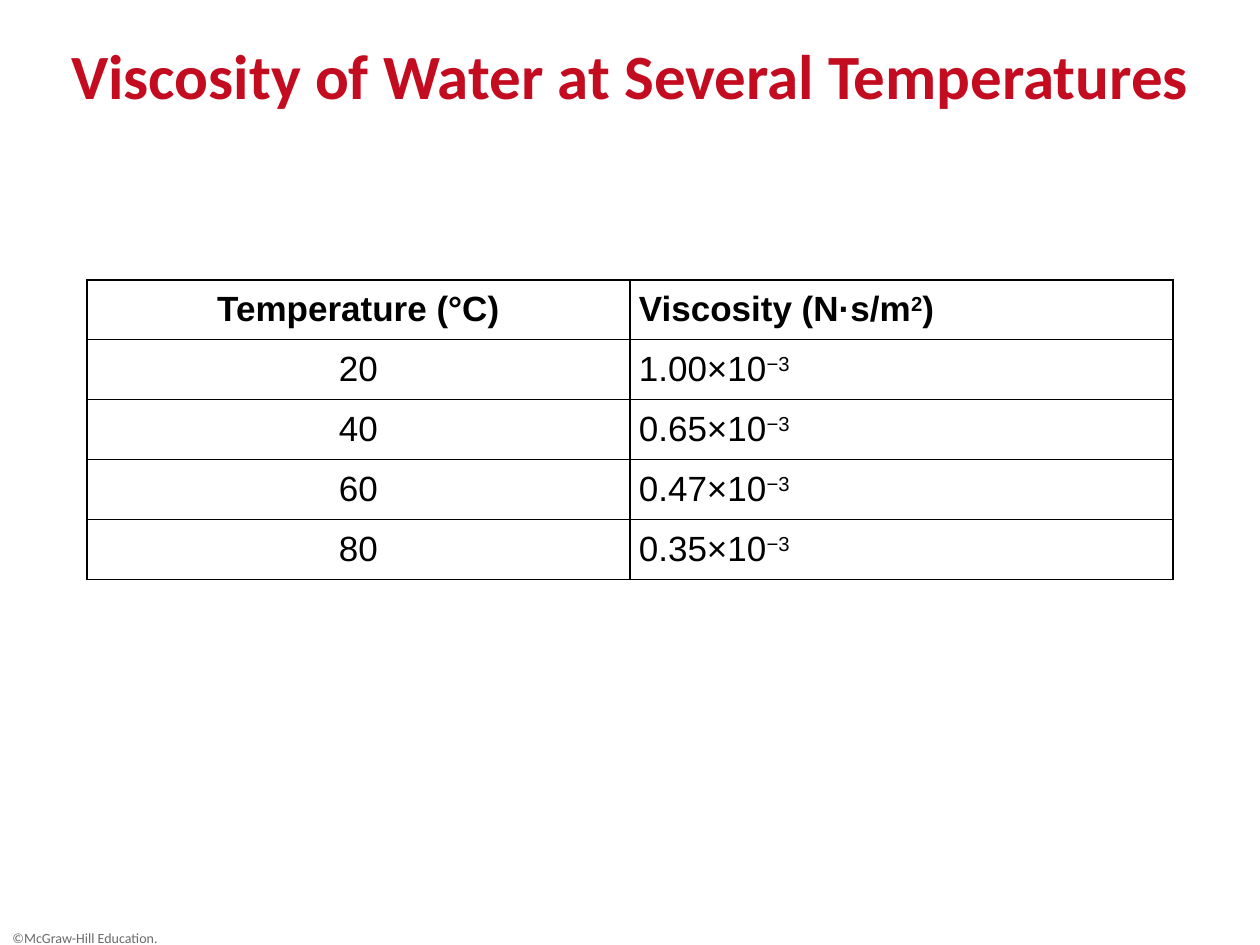
from lxml.etree import SubElement
from pptx import Presentation
from pptx.dml.color import RGBColor
from pptx.enum.text import MSO_ANCHOR as Anchor, MSO_AUTO_SIZE as AutoSize, PP_ALIGN as Align
from pptx.oxml.ns import qn
from pptx.util import Cm, Pt

BLACK, CRIMSON, GREY = "000000", "C30C20", "6A6A6A"
HEADER = [["Temperature (°C)"], ["Viscosity (N·s/m", "2", ")"]]
VISCOSITIES = {"20": "1.00", "40": "0.65", "60": "0.47", "80": "0.35"}


def set_font(font, name, size, color, bold=False):
    font.name, font.size, font.bold = name, Pt(size), bold
    font.color.rgb = RGBColor.from_string(color)


def place(shape, left, top, width, height):
    shape.left, shape.top = Cm(left), Cm(top)
    shape.width, shape.height = Cm(width), Cm(height)


def add_title(slide, left, top, width, height):
    title = slide.shapes.title
    place(title, left, top, width, height)
    frame = title.text_frame
    frame.text = "Viscosity of Water at Several Temperatures"
    frame.word_wrap, frame.auto_size = True, AutoSize.NONE
    frame.vertical_anchor = Anchor.MIDDLE
    heading = frame.paragraphs[0]
    heading.alignment = Align.CENTER
    set_font(heading.runs[0].font, "Calibri", 36, CRIMSON, bold=True)


def add_copyright(slide, left, top, width, height):
    notice = slide.shapes.add_textbox(Cm(left), Cm(top), Cm(width), Cm(height))
    frame = notice.text_frame
    frame.word_wrap = True
    frame.text = "©McGraw-Hill Education."
    set_font(frame.paragraphs[0].runs[0].font, "Calibri", 8, GREY)


def add_borders(cell, color=BLACK, width=1):
    properties = cell._tc.get_or_add_tcPr()
    for index, side in enumerate(("lnL", "lnR", "lnT", "lnB")):
        line = properties.makeelement(qn(f"a:{side}"), {"w": str(Pt(width))})
        fill = SubElement(line, qn("a:solidFill"))
        SubElement(fill, qn("a:srgbClr"), val=color)
        properties.insert(index, line)


def fill_cell(cell, parts, alignment, bold):
    """Write the parts in turn as normal and superscript text."""
    cell.fill.background()
    add_borders(cell)
    cell.vertical_anchor = Anchor.MIDDLE
    cell.margin_left = cell.margin_right = Cm(0.18)
    cell.margin_top = cell.margin_bottom = Cm(0.18)
    paragraph = cell.text_frame.paragraphs[0]
    paragraph.alignment = alignment
    for index, part in enumerate(parts):
        run = paragraph.add_run()
        run.text = part
        set_font(run.font, "Arial", 20, BLACK, bold)
        if index % 2:
            run.font._element.set("baseline", "30000")


def add_viscosity_table(slide, left, top, width, height):
    rows = [HEADER] + [[[temperature], [f"{viscosity}×10", "−3"]]
                       for temperature, viscosity in VISCOSITIES.items()]
    table = slide.shapes.add_table(len(rows), len(HEADER), Cm(left), Cm(top),
                                   Cm(width), Cm(height)).table
    table.horz_banding = False
    for row_index, row in enumerate(rows):
        for column, (parts, alignment) in enumerate(zip(row, (Align.CENTER, Align.LEFT))):
            fill_cell(table.cell(row_index, column), parts, alignment, bold=row_index == 0)


def main():
    presentation = Presentation()
    presentation.slide_width, presentation.slide_height = Cm(25.4), Cm(19.05)
    slide = presentation.slides.add_slide(presentation.slide_layouts[5])
    add_copyright(slide, 0, 18.62, 3.81, 0.43)
    add_title(slide, 0, 0.64, 25.4, 1.7)
    add_viscosity_table(slide, 1.75, 5.64, 21.9, 5.7)
    presentation.save("out.pptx")


if __name__ == "__main__":
    main()
